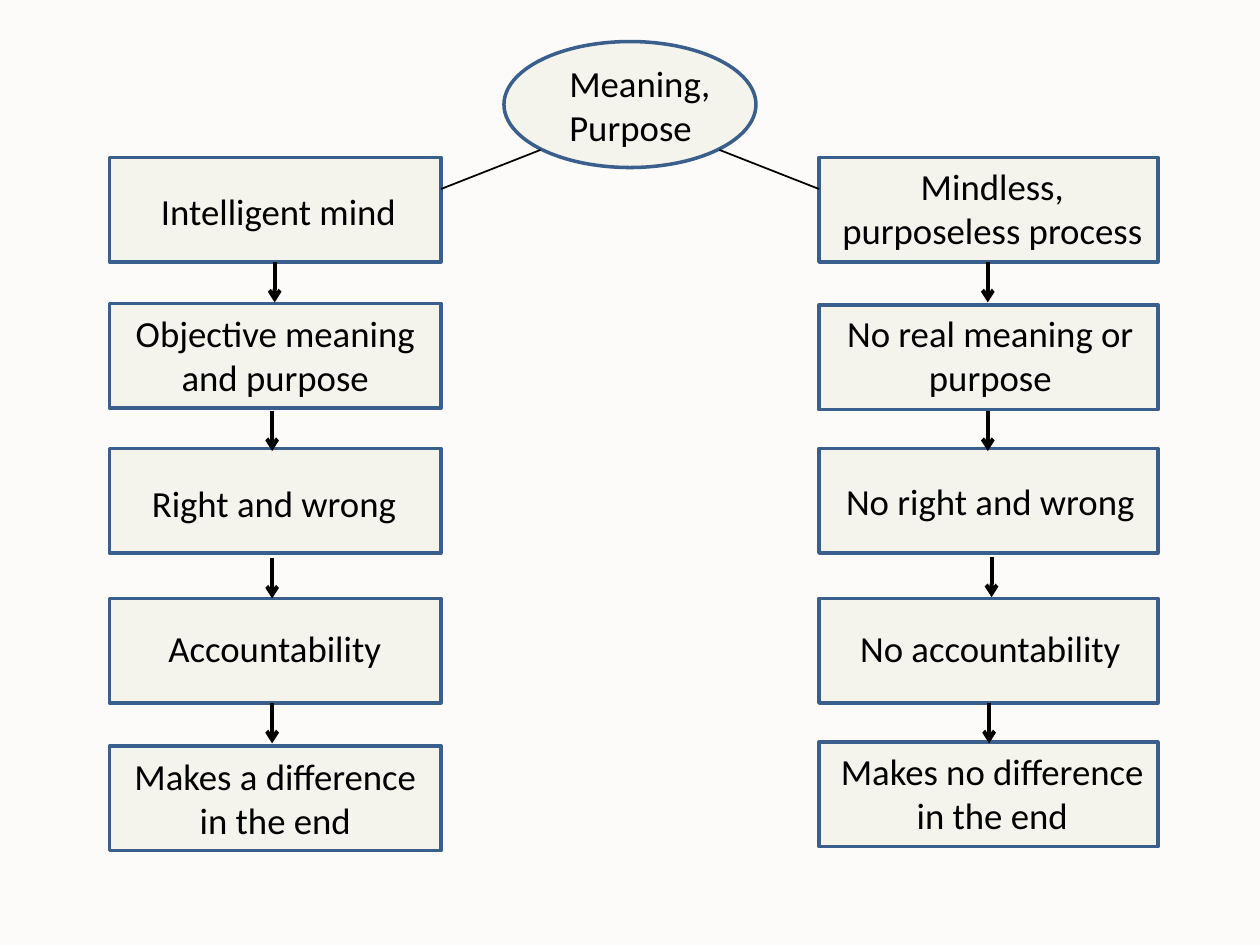
from lxml import etree
from pptx import Presentation
from pptx.dml.color import RGBColor
from pptx.enum import shapes, text
from pptx.oxml.ns import qn
from pptx.util import Inches, Pt

COLORS = {"background": "FCFBF9", "box": "F4F3EC", "border": "3A5F8C", "ink": "000000"}
FONT, TEXT_SIZE = "Calibri", 21
BOX_HEIGHT, ARROW_LENGTH = 0.83, 0.32
LINE_HEIGHTS = {1: 0.45, 2: 0.81}

# Each step: box top, label, lines, label left, label top, label width
INTELLIGENT = [
    (1.25, "Intelligent mind", 1, 1.13, 1.45, 2.16),
    (2.41, "Objective meaning and purpose", 2, 0.87, 2.42, 2.63),
    (3.56, "Right and wrong", 1, 0.86, 3.77, 2.63),
    (4.75, "Accountability", 1, 0.87, 4.92, 2.62),
    (5.92, "Makes a difference in the end", 2, 0.87, 5.93, 2.63),
]
MINDLESS = [
    (1.25, "Mindless, purposeless process", 2, 6.53, 1.25, 2.69),
    (2.42, "No real meaning or purpose", 2, 6.53, 2.42, 2.66),
    (3.56, "No right and wrong", 1, 6.53, 3.75, 2.66),
    (4.75, "No accountability", 1, 6.53, 4.92, 2.66),
    (5.89, "Makes no difference in the end", 2, 6.56, 5.89, 2.63),
]
# Box left, box width, steps, arrow starts (x, y)
CHAINS = [
    (0.87, 2.63, INTELLIGENT, [(2.18, 2.08), (2.16, 3.26), (2.16, 4.43), (2.16, 5.58)]),
    (6.5, 2.69, MINDLESS, [(7.84, 2.08), (7.84, 3.26), (7.87, 4.42), (7.85, 5.58)]),
]


def rgb(name):
    return RGBColor.from_string(COLORS[name])


class Diagram:
    def __init__(self, slide):
        self.slide = slide
        slide.background.fill.solid()
        slide.background.fill.fore_color.rgb = rgb("background")

    def node(self, kind, left, top, width, height):
        node = self.slide.shapes.add_shape(kind, *map(Inches, (left, top, width, height)))
        node.shadow.inherit = False
        node.fill.solid()
        node.fill.fore_color.rgb = rgb("box")
        node.line.color.rgb = rgb("border")
        node.line.width = Pt(2)

    def label(self, wording, lines, left, top, width, align=text.PP_ALIGN.CENTER):
        place = map(Inches, (left, top, width, LINE_HEIGHTS[lines]))
        frame = self.slide.shapes.add_textbox(*place).text_frame
        frame.word_wrap = True
        frame.auto_size = text.MSO_AUTO_SIZE.SHAPE_TO_FIT_TEXT
        paragraph = frame.paragraphs[0]
        paragraph.text = wording
        paragraph.alignment = align
        paragraph.font.name = FONT
        paragraph.font.size = Pt(TEXT_SIZE)
        paragraph.font.color.rgb = rgb("ink")

    def connector(self, start, end, weight=1.0, arrow=False):
        link = self.slide.shapes.add_connector(
            shapes.MSO_CONNECTOR.STRAIGHT, *map(Inches, (*start, *end)))
        link.line.color.rgb = rgb("ink")
        link.line.width = Pt(weight)
        if arrow:
            etree.SubElement(link.line._get_or_add_ln(), qn("a:tailEnd"), type="arrow")
        etree.SubElement(link._element.spPr, qn("a:effectLst"))


def main():
    deck = Presentation()
    deck.slide_width, deck.slide_height = Inches(10), Inches(7.5)
    diagram = Diagram(deck.slides.add_slide(deck.slide_layouts[6]))

    # Root question
    diagram.node(shapes.MSO_SHAPE.OVAL, 4, 0.33, 2, 1)
    diagram.label("Meaning, Purpose", 2, 4.42, 0.43, 1.33, text.PP_ALIGN.LEFT)

    # The two chains of consequences
    for left, width, steps, arrow_starts in CHAINS:
        for top, wording, lines, *label_place in steps:
            diagram.node(shapes.MSO_SHAPE.RECTANGLE, left, top, width, BOX_HEIGHT)
            diagram.label(wording, lines, *label_place)
        for x, y in arrow_starts:
            diagram.connector((x, y), (x, y + ARROW_LENGTH), 2.25, arrow=True)

    # Branches from the root to each chain
    diagram.connector((5.71, 1.19), (6.5, 1.5))
    diagram.connector((4.29, 1.19), (3.5, 1.5))

    deck.save("out.pptx")


if __name__ == "__main__":
    main()
